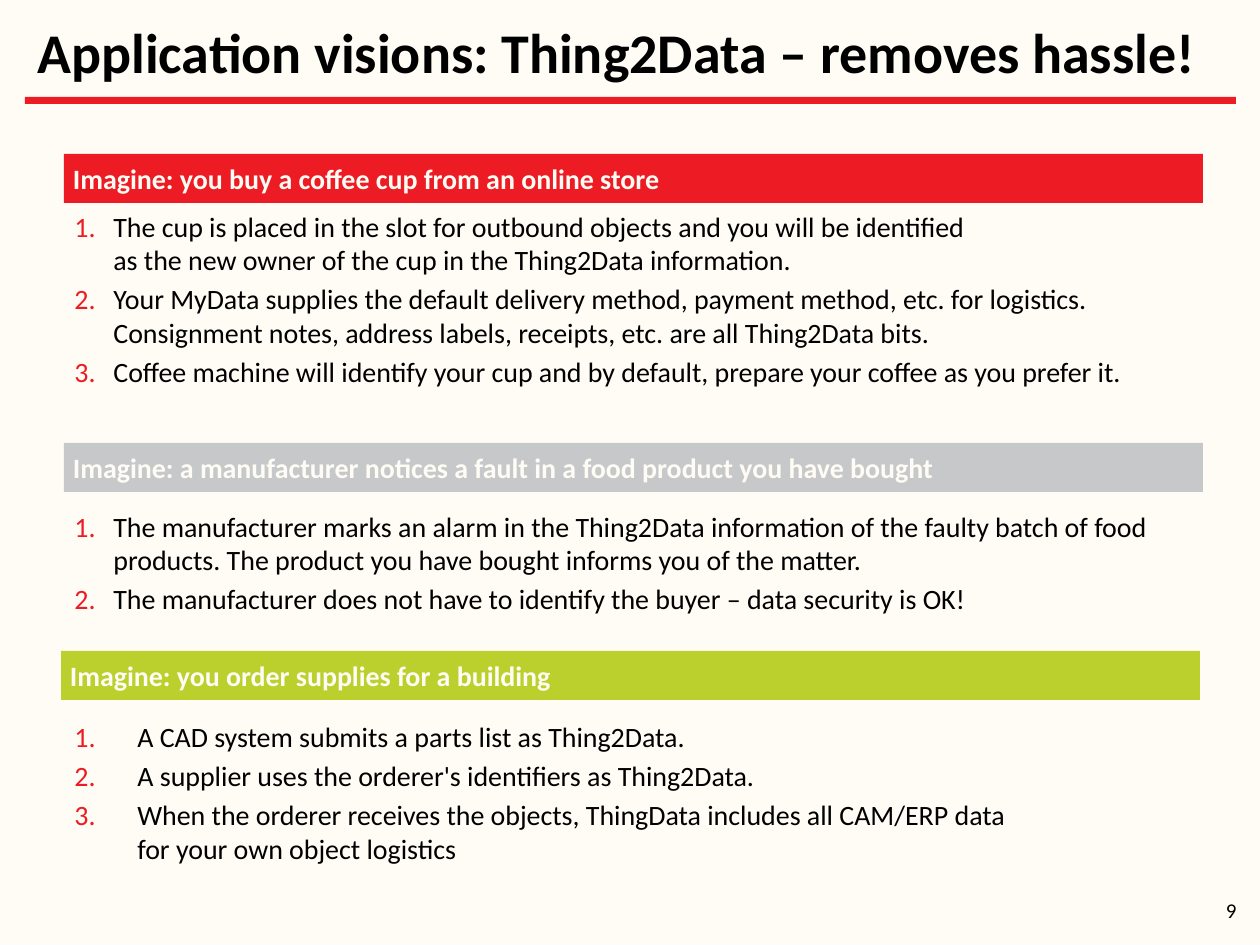
import pptx
import pptx.util
import pptx.dml.color
import pptx.enum.shapes
import pptx.enum.text
import lxml.etree

TITLE = "Application visions: Thing2Data – removes hassle!"
PAGE = "9"
PARTS = [
    dict(head="Imagine: you buy a coffee cup from an online store",
         color="ED1C24", bar=(64, 154), top=203, tall=233, indent=39, items=[
             "The cup is placed in the slot for outbound objects and you will be identified \n"
             "as the new owner of the cup in the Thing2Data information.",
             "Your MyData supplies the default delivery method, payment method, etc. for logistics. \n"
             "Consignment notes, address labels, receipts, etc. are all Thing2Data bits.",
             "Coffee machine will identify your cup and by default, prepare your coffee as you prefer it."]),
    dict(head="Imagine: a manufacturer notices a fault in a food product you have bought",
         color="C6C8CA", bar=(64, 443), top=503, tall=147, indent=39, items=[
             "The manufacturer marks an alarm in the Thing2Data information of the faulty batch of food "
             "products. The product you have bought informs you of the matter.",
             "The manufacturer does not have to identify the buyer – data security is OK!"]),
    dict(head="Imagine: you order supplies for a building",
         color="BCD02D", bar=(61, 651), top=713, tall=147, indent=63, items=[
             "A CAD system submits a parts list as Thing2Data.",
             "A supplier uses the orderer's identifiers as Thing2Data.",
             "When the orderer receives the objects, ThingData includes all CAM/ERP data \n"
             "for your own object logistics"]),
]
THEME = dict(font="Calibri", paper="FEFCF4", ink="000000", accent="ED1C24",
             title=32, body=16, page=12, gap=3.2)
BAR = (1139, 49)
LIST = (62, 1143)
NS = "http://schemas.openxmlformats.org/drawingml/2006/main"
ALIGN = pptx.enum.text.PP_ALIGN
MIDDLE = pptx.enum.text.MSO_ANCHOR.MIDDLE


def px(n):
    return pptx.util.Emu(round(n * 914400 / 126))


def rgb(code):
    return pptx.dml.color.RGBColor.from_string(code)


def style(para, size, color=THEME["ink"], bold=False, align=ALIGN.LEFT):
    para.alignment = align
    font = para.font
    font.name, font.size, font.bold = THEME["font"], pptx.util.Pt(size), bold
    font.color.rgb = rgb(color)


def label(slide, box, text, size, **look):
    frame = slide.shapes.add_textbox(*map(px, box)).text_frame
    frame.word_wrap = True
    frame.vertical_anchor = MIDDLE
    frame.text = text
    style(frame.paragraphs[0], size, **look)


def block(slide, box, color):
    shape = slide.shapes.add_shape(
        pptx.enum.shapes.MSO_SHAPE.RECTANGLE, *map(px, box))
    shape.shadow.inherit = False
    shape.fill.solid()
    shape.fill.fore_color.rgb = rgb(color)
    shape.line.fill.background()
    return shape


def header(slide, part):
    frame = block(slide, part["bar"] + BAR, part["color"]).text_frame
    frame.word_wrap = True
    frame.vertical_anchor = MIDDLE
    frame.margin_left = frame.margin_right = px(9)
    frame.margin_top = frame.margin_bottom = 0
    frame.text = part["head"]
    style(frame.paragraphs[0], THEME["body"], THEME["paper"], True)


def number(para, indent):
    props = para._p.get_or_add_pPr()
    props.set("marL", str(px(indent)))
    props.set("indent", str(-px(indent)))
    tint = lxml.etree.SubElement(props, f"{{{NS}}}buClr")
    lxml.etree.SubElement(tint, f"{{{NS}}}srgbClr", val=THEME["accent"])
    lxml.etree.SubElement(props, f"{{{NS}}}buFont", typeface=THEME["font"])
    lxml.etree.SubElement(props, f"{{{NS}}}buAutoNum", type="arabicPeriod")


def steps(slide, part):
    left, wide = LIST
    box = (left, part["top"], wide, part["tall"])
    frame = slide.shapes.add_textbox(*map(px, box)).text_frame
    frame.word_wrap = True
    for i, item in enumerate(part["items"]):
        para = frame.add_paragraph() if i else frame.paragraphs[0]
        para.text = item
        if i:
            para.space_before = pptx.util.Pt(THEME["gap"])
        number(para, part["indent"])
        style(para, THEME["body"])


def main():
    deck = pptx.Presentation()
    deck.slide_width, deck.slide_height = px(1260), px(945)
    slide = deck.slides.add_slide(deck.slide_layouts[6])
    slide.background.fill.solid()
    slide.background.fill.fore_color.rgb = rgb(THEME["paper"])
    block(slide, (25, 97, 1211, 7), THEME["accent"])
    label(slide, (25, 6, 1211, 90), TITLE, THEME["title"], bold=True)
    label(slide, (1191, 885, 58, 50), PAGE, THEME["page"], align=ALIGN.RIGHT)
    for part in PARTS:
        header(slide, part)
        steps(slide, part)
    deck.save("out.pptx")


if __name__ == "__main__":
    main()
